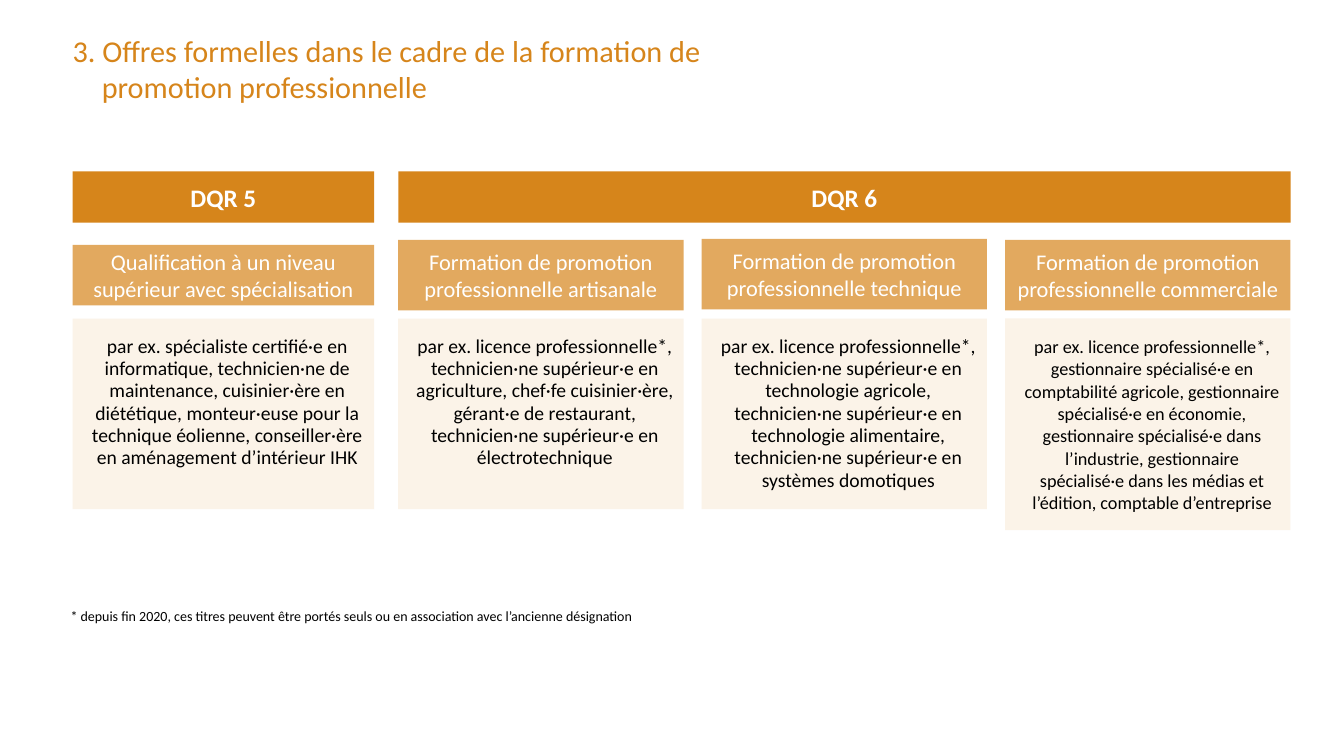
from dataclasses import dataclass

from pptx import Presentation
from pptx.dml.color import RGBColor
from pptx.enum.shapes import MSO_SHAPE
from pptx.enum.text import MSO_ANCHOR as Anchor, PP_ALIGN as Align
from pptx.util import Inches, Pt


@dataclass(frozen=True)
class Theme:
    font: str = "Calibri"
    orange: str = "D6851B"
    amber: str = "E2A95F"
    cream: str = "FBF3E8"
    white: str = "FFFFFF"
    black: str = "000000"
    title_size: float = 21.6
    level_size: float = 18
    heading_size: float = 16
    example_size: float = 14
    dense_size: float = 13
    note_size: float = 10


THEME = Theme()

LEVEL_TOP, LEVEL_HEIGHT = 1.7, 0.51
EXAMPLE_TOP = 3.16
FIRST_LEFT, FIRST_WIDTH = 0.72, 2.99
GRID_LEFT, COLUMN_WIDTH, COLUMN_STEP = 3.95, 2.83, 3.01
GRID_WIDTH = 2 * COLUMN_STEP + COLUMN_WIDTH

FIRST_COLUMN = (
    "Qualification à un niveau supérieur avec spécialisation",
    "par ex. spécialiste certifié·e en informatique, technicien·ne de "
    "maintenance, cuisinier·ère en diététique, monteur·euse pour la technique "
    "éolienne, conseiller·ère en aménagement d’intérieur IHK",
)

GRID_COLUMNS = [
    (
        "Formation de promotion\nprofessionnelle artisanale",
        "par ex. licence professionnelle*, technicien·ne supérieur·e en "
        "agriculture, chef·fe cuisinier·ère, gérant·e de restaurant, "
        "technicien·ne supérieur·e en électrotechnique",
        2.38, 1.89, THEME.example_size,
    ),
    (
        "Formation de promotion\nprofessionnelle technique",
        "par ex. licence professionnelle*, technicien·ne supérieur·e en "
        "technologie agricole, technicien·ne supérieur·e en technologie "
        "alimentaire, technicien·ne supérieur·e en systèmes domotiques",
        2.37, 1.89, THEME.example_size,
    ),
    (
        "Formation de promotion\nprofessionnelle commerciale",
        "par ex. licence professionnelle*, gestionnaire spécialisé·e en "
        "comptabilité agricole, gestionnaire spécialisé·e en économie, "
        "gestionnaire spécialisé·e dans l’industrie, gestionnaire spécialisé·e "
        "dans les médias et l’édition, comptable d’entreprise",
        2.38, 2.1, THEME.dense_size,
    ),
]


def write_text(shape, text, size, color, insets, anchor=Anchor.TOP,
               align=Align.LEFT, bold=False, line_points=None):
    frame = shape.text_frame
    frame.word_wrap = True
    frame.vertical_anchor = anchor
    (frame.margin_left, frame.margin_top,
     frame.margin_right, frame.margin_bottom) = map(Inches, insets)
    paragraph = frame.paragraphs[0]
    paragraph.alignment = align
    if line_points:
        paragraph.line_spacing = Pt(line_points)
    for index, line in enumerate(text.split("\n")):
        if index:
            paragraph.add_line_break()
        run = paragraph.add_run()
        run.text = line
        run.font.name = THEME.font
        run.font.size = Pt(size)
        run.font.bold = bold
        run.font.color.rgb = RGBColor.from_string(color)
    return paragraph


def add_text(slide, box, text, size, color):
    shape = slide.shapes.add_textbox(*map(Inches, box))
    return write_text(shape, text, size, color, (0, 0, 0, 0))


def add_box(slide, box, fill, text, size, color, insets, **style):
    shape = slide.shapes.add_shape(MSO_SHAPE.RECTANGLE, *map(Inches, box))
    shape.shadow.inherit = False
    shape.fill.solid()
    shape.fill.fore_color.rgb = RGBColor.from_string(fill)
    shape.line.fill.background()
    write_text(shape, text, size, color, insets, align=Align.CENTER, **style)


def add_level(slide, left, width, text):
    add_box(slide, (left, LEVEL_TOP, width, LEVEL_HEIGHT), THEME.orange, text,
            THEME.level_size, THEME.white, (0.04, 0.08, 0.04, 0),
            anchor=Anchor.MIDDLE, bold=True, line_points=17)


def add_column(slide, left, width, heading, examples, heading_top=2.38,
               example_height=1.89, example_size=THEME.example_size,
               heading_height=0.7):
    add_box(slide, (left, heading_top, width, heading_height), THEME.amber,
            heading, THEME.heading_size, THEME.white,
            (0.04, 0.08, 0.04, 0.08), anchor=Anchor.MIDDLE)
    add_box(slide, (left, EXAMPLE_TOP, width, example_height), THEME.cream,
            examples, example_size, THEME.black, (0.16, 0.16, 0.08, 0.16),
            line_points=16)


def add_title(slide):
    paragraph = add_text(
        slide, (FIRST_LEFT, 0.32, 9.84, 0.75),
        "3. Offres formelles dans le cadre de la formation de\n"
        "promotion professionnelle", THEME.title_size, THEME.orange)
    properties = paragraph._p.get_or_add_pPr()
    properties.set("marL", str(Inches(0.29)))
    properties.set("indent", str(Inches(-0.29)))


def main():
    presentation = Presentation()
    presentation.slide_width = Inches(13.33)
    presentation.slide_height = Inches(7.5)
    slide = presentation.slides.add_slide(presentation.slide_layouts[6])

    add_title(slide)
    add_level(slide, FIRST_LEFT, FIRST_WIDTH, "DQR 5")
    add_column(slide, FIRST_LEFT, FIRST_WIDTH, *FIRST_COLUMN,
               heading_top=2.43, heading_height=0.6)
    add_level(slide, GRID_LEFT, GRID_WIDTH, "DQR 6")
    for index, column in enumerate(GRID_COLUMNS):
        add_column(slide, GRID_LEFT + index * COLUMN_STEP, COLUMN_WIDTH, *column)
    add_text(slide, (0.7, 6.03, 8, 0.18),
             "* depuis fin 2020, ces titres peuvent être portés seuls ou en "
             "association avec l’ancienne désignation",
             THEME.note_size, THEME.black)

    presentation.save("out.pptx")


if __name__ == "__main__":
    main()
